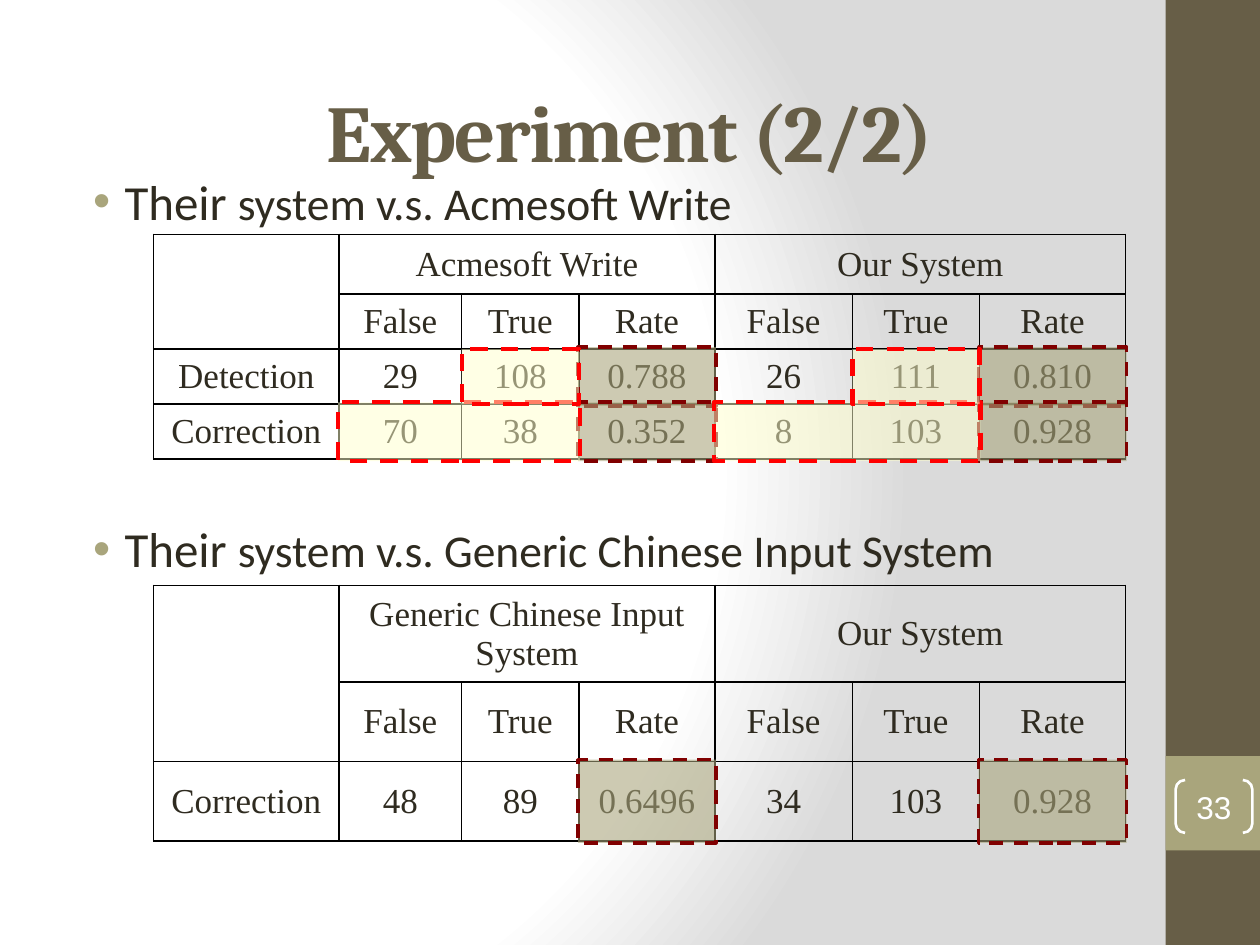
from itertools import accumulate

from lxml import etree
from pptx import Presentation
from pptx.dml.color import RGBColor
from pptx.enum.dml import MSO_LINE
from pptx.enum.shapes import MSO_SHAPE
from pptx.enum.text import MSO_ANCHOR, PP_ALIGN
from pptx.oxml import parse_xml
from pptx.oxml.ns import nsdecls, qn
from pptx.util import Inches, Pt

RECTANGLE, BRACKETS = MSO_SHAPE.RECTANGLE, MSO_SHAPE.DOUBLE_BRACKET
CENTER, MIDDLE, DASH = PP_ALIGN.CENTER, MSO_ANCHOR.MIDDLE, MSO_LINE.DASH

THEME = {
    "dark": "675E47", "sage": "A9A57C", "ink": "2F2B20", "white": "FFFFFF",
    "black": "000000", "gray": "DADADA", "maroon": "800000", "red": "FF0000", "cream": "FFFFCC",
    "title": ("Cambria", 46), "lead": ("Calibri", 28), "body": ("Calibri", 26),
    "cell": ("Times New Roman", 20), "number": ("Arial", 18),
}

presentation = Presentation()
presentation.slide_width, presentation.slide_height = Inches(10), Inches(7.5)
GRID = presentation.slide_width / 40
slide = presentation.slides.add_slide(presentation.slide_layouts[6])


def add_box(kind, left, top, width, height, fill=None, opacity=100, line=None, weight=1):
    shape = slide.shapes.add_shape(kind, *(round(value * GRID) for value in (left, top, width, height)))
    shape.shadow.inherit = False
    if fill:
        shape.fill.solid()
        shape.fill.fore_color.rgb = RGBColor.from_string(THEME[fill])
        if opacity < 100:
            color = shape.fill._xPr.find(".//" + qn("a:srgbClr"))
            etree.SubElement(color, qn("a:alpha")).set("val", str(opacity * 1000))
    else:
        shape.fill.background()
    if line:
        shape.line.color.rgb = RGBColor.from_string(THEME[line])
        shape.line.width = Pt(weight)
    else:
        shape.line.fill.background()
    return shape


def style_font(font, role, color):
    font.name, size = THEME[role]
    font.size = Pt(size)
    font.color.rgb = RGBColor.from_string(THEME[color])


stops = "".join(
    f'<a:gs pos="{position}000"><a:srgbClr val="{THEME[color]}"/></a:gs>'
    for position, color in ((0, "white"), (75, "white"), (100, "gray"))
)
slide.element.cSld.insert(0, parse_xml(
    f'<p:bg {nsdecls("p", "a")}><p:bgPr><a:gradFill rotWithShape="1"><a:gsLst>{stops}</a:gsLst>'
    '<a:path path="circle"><a:fillToRect l="20000" t="50000" r="100000" b="50000"/></a:path>'
    '</a:gradFill><a:effectLst/></p:bgPr></p:bg>'
))

add_box(RECTANGLE, 37, 0, 3, 30, "dark")
add_box(RECTANGLE, 37, 24, 3, 3, "sage")

title = slide.shapes.add_textbox(*(round(value * GRID) for value in (2, 2.08, 36, 4.12)))
title.text_frame.word_wrap = True
title.text_frame.vertical_anchor = MIDDLE
paragraph = title.text_frame.paragraphs[0]
paragraph.alignment = CENTER
run = paragraph.add_run()
run.text = "Experiment (2/2)"
style_font(run.font, "title", "dark")
run.font.bold = True
run.font._element.set("spc", "-100")

body = slide.shapes.add_textbox(*(round(value * GRID) for value in (2.04, 5.24, 35.64, 19.8)))
body.text_frame.word_wrap = True
for index, rival in enumerate(("Acmesoft Write", "Generic Chinese Input System")):
    paragraph = body.text_frame.add_paragraph() if index else body.text_frame.paragraphs[0]
    paragraph.space_before = Pt(165 * index)
    for text, role in (("Their ", "lead"), (f"system v.s. {rival}", "body")):
        run = paragraph.add_run()
        run.text = text
        style_font(run.font, role, "ink")
    properties = paragraph._p.get_or_add_pPr()
    properties.set("marL", str(round(1.52 * GRID)))
    properties.set("indent", str(round(-GRID)))
    bullet_color = etree.SubElement(properties, qn("a:buClr"))
    etree.SubElement(bullet_color, qn("a:srgbClr")).set("val", THEME["sage"])
    etree.SubElement(properties, qn("a:buFont")).set("typeface", "Arial")
    etree.SubElement(properties, qn("a:buChar")).set("char", "•")

TABLE_LEFT = 4.88
COLUMNS = (5.88, 3.9, 3.72, 4.32, 4.36, 4.04, 4.64)
COLUMN_EDGES = list(accumulate(COLUMNS, initial=TABLE_LEFT))
MEASURES = ("", *("False", "True", "Rate") * 2)
TABLES = (
    (18.58, (3.08, 2.52, 2.52), "Generic Chinese Input System", (
        ("Correction", "48", "89", "0.6496", "34", "103", "0.928"),
    )),
    (7.44, (1.89, 1.75, 1.75, 1.75), "Acmesoft Write", (
        ("Detection", "29", "108", "0.788", "26", "111", "0.810"),
        ("Correction", "70", "38", "0.352", "8", "103", "0.928"),
    )),
)
row_edges = []
for top, heights, rival, results in TABLES:
    row_edges.append(list(accumulate(heights, initial=top)))
    rows = (("", rival, "", "", "Our System", "", ""), MEASURES, *results)
    frame = slide.shapes.add_table(
        len(rows), len(COLUMNS),
        *(round(value * GRID) for value in (TABLE_LEFT, top, sum(COLUMNS), sum(heights))),
    )
    table = frame.table
    table.first_row = table.horz_banding = False
    for column, width in zip(table.columns, COLUMNS):
        column.width = round(width * GRID)
    for row, height, texts in zip(table.rows, heights, rows):
        row.height = round(height * GRID)
        for cell, text in zip(row.cells, texts):
            cell.vertical_anchor = MIDDLE
            cell.text = text
            paragraph = cell.text_frame.paragraphs[0]
            paragraph.alignment = CENTER
            style_font(paragraph.font, "cell", "ink")
            for side in "LRTB":
                cell._tc.get_or_add_tcPr().append(parse_xml(
                    f'<a:ln{side} {nsdecls("a")} w="12700"><a:solidFill>'
                    f'<a:srgbClr val="{THEME["black"]}"/></a:solidFill></a:ln{side}>'
                ))
            cell.fill.background()
    table.cell(0, 0).merge(table.cell(1, 0))
    for first in (1, 4):
        table.cell(0, first).merge(table.cell(0, first + 2))

RATE = ("sage", 58, "maroon", 2)
COUNT = ("cream", 50, "red", 2.5)
HIGHLIGHTS = [(table_index, row, column, column + 1, 0.06, RATE)
              for table_index, row in ((0, 2), (1, 2), (1, 3)) for column in (3, 6)]
for start in (1, 4):
    HIGHLIGHTS += [(1, 3, start, start + 2, 0.06, COUNT), (1, 2, start + 1, start + 2, 0, COUNT)]
for table_index, row, start, end, margin, look in HIGHLIGHTS:
    left, right = COLUMN_EDGES[start], COLUMN_EDGES[end]
    top, bottom = row_edges[table_index][row:row + 2]
    highlight = add_box(RECTANGLE, left - margin / 2, top - margin,
                        right - left + margin, bottom - top + 2 * margin, *look)
    highlight.line.dash_style = DASH

page_number = add_box(BRACKETS, 37.32, 24.76, 2.44, 1.68, line="white", weight=1.5)
page_number.adjustments[0] = 0.18
text_frame = page_number.text_frame
text_frame.margin_left = text_frame.margin_right = text_frame.margin_top = text_frame.margin_bottom = 0
text_frame.vertical_anchor = MIDDLE
text_frame.text = "33"
text_frame.paragraphs[0].alignment = CENTER
style_font(text_frame.paragraphs[0].font, "number", "white")

presentation.save("out.pptx")
